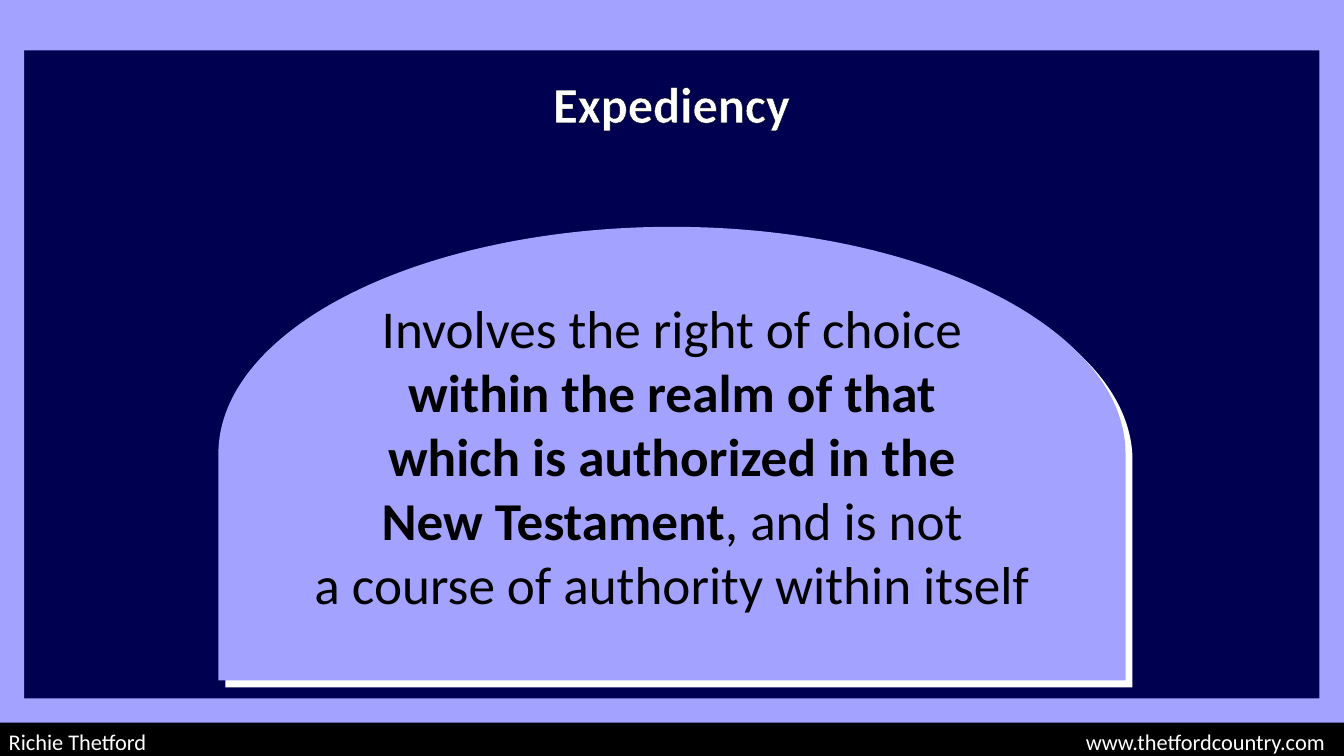
import pptx
import pptx.util
import pptx.dml.color
import pptx.enum.shapes
import pptx.enum.text
import pptx.oxml
import pptx.oxml.ns

Cm = pptx.util.Cm
RGBColor = pptx.dml.color.RGBColor
MSO_SHAPE = pptx.enum.shapes.MSO_SHAPE
PP_ALIGN = pptx.enum.text.PP_ALIGN
MSO_ANCHOR = pptx.enum.text.MSO_ANCHOR

NAVY = RGBColor(0x00, 0x00, 0x50)
LILAC = RGBColor(0xA3, 0xA3, 0xFF)
WHITE = RGBColor(0xFF, 0xFF, 0xFF)
BLACK = RGBColor(0x00, 0x00, 0x00)
FONT = "Calibri"


def make_xml(text):
    return pptx.oxml.parse_xml(text.replace(">", " " + pptx.oxml.ns.nsdecls("a") + ">", 1))


def format_run(r, size, color, bold=False):
    r.font.name = FONT
    r.font.size = pptx.util.Pt(size)
    r.font.bold = bold
    r.font.color.rgb = color


def add_block(s, kind, box, color):
    sp = s.shapes.add_shape(kind, *(Cm(v) for v in box))
    sp.shadow.inherit = False
    sp.fill.solid()
    sp.fill.fore_color.rgb = color
    sp.line.fill.background()
    return sp


def set_title(s, text):
    sp = s.shapes.title
    sp.left, sp.top, sp.width, sp.height = Cm(5.28), Cm(1.7), Cm(23.29), Cm(6.55)
    tf = sp.text_frame
    tf.text = text
    tf.word_wrap = False
    tf.auto_size = pptx.enum.text.MSO_AUTO_SIZE.NONE
    tf.vertical_anchor = MSO_ANCHOR.TOP
    p = tf.paragraphs[0]
    p.alignment = PP_ALIGN.CENTER
    r = p.runs[0]
    format_run(r, 36, WHITE, True)
    # Thin black outline around the letters
    r.font._element.insert(0, make_xml(
        f'<a:ln w="9525"><a:solidFill><a:srgbClr val="{BLACK}"/></a:solidFill></a:ln>'))


def add_arch(s):
    # Delay symbol turned upright, with a hard white shadow
    sp = add_block(s, MSO_SHAPE.FLOWCHART_DELAY, (11.22, 0, 11.43, 22.86), LILAC)
    sp.rotation = 270
    effects = sp._element.spPr.find(pptx.oxml.ns.qn("a:effectLst"))
    effects.append(make_xml(
        '<a:outerShdw dist="90000" dir="2700000" algn="ctr" rotWithShape="0">'
        f'<a:srgbClr val="{WHITE}"/></a:outerShdw>'))


def add_definition(s, lines):
    sp = s.shapes.add_textbox(Cm(5.51), Cm(7.32), Cm(22.86), Cm(8.38))
    tf = sp.text_frame
    tf.word_wrap = True
    p = tf.paragraphs[0]
    p.alignment = PP_ALIGN.CENTER
    for i, line in enumerate(lines):
        if i:
            p.add_line_break()
        for text, bold in line:
            r = p.add_run()
            r.text = text
            format_run(r, 38, BLACK, bold)


def add_footer(s, author, site):
    sp = add_block(s, MSO_SHAPE.RECTANGLE, (-0.03, 18.21, 33.91, 0.94), BLACK)
    tf = sp.text_frame
    tf.text = f"{author}\t{site}"
    tf.word_wrap = True
    p = tf.paragraphs[0]
    p.alignment = PP_ALIGN.LEFT
    format_run(p.runs[0], 16, WHITE)
    # Right tab stop for the web address
    p._p.get_or_add_pPr().append(make_xml(
        f'<a:tabLst><a:tab pos="{Cm(33.17)}" algn="r"/></a:tabLst>'))


def main():
    prs = pptx.Presentation()
    prs.slide_width, prs.slide_height = Cm(33.87), Cm(19.05)
    s = prs.slides.add_slide(prs.slide_layouts[5])
    s.background.fill.solid()
    s.background.fill.fore_color.rgb = NAVY

    # Title and definition
    set_title(s, "Expediency")
    add_arch(s)
    add_definition(s, [
        [("Involves the right of choice", False)],
        [("within the realm of that", True)],
        [("which is authorized in the", True)],
        [("New Testament", True), (", and is not", False)],
        [("a course of authority within itself", False)],
    ])

    # Frame: left, right, top, bottom
    for box in ((-0.03, 0, 0.64, 19.05), (33.25, 0, 0.64, 19.05),
                (0.61, 0, 32.79, 1.27), (0.41, 17.6, 33.17, 0.64)):
        add_block(s, MSO_SHAPE.RECTANGLE, box, LILAC)

    add_footer(s, "Richie Thetford", "www.thetfordcountry.com")
    prs.save("out.pptx")


if __name__ == "__main__":
    main()
